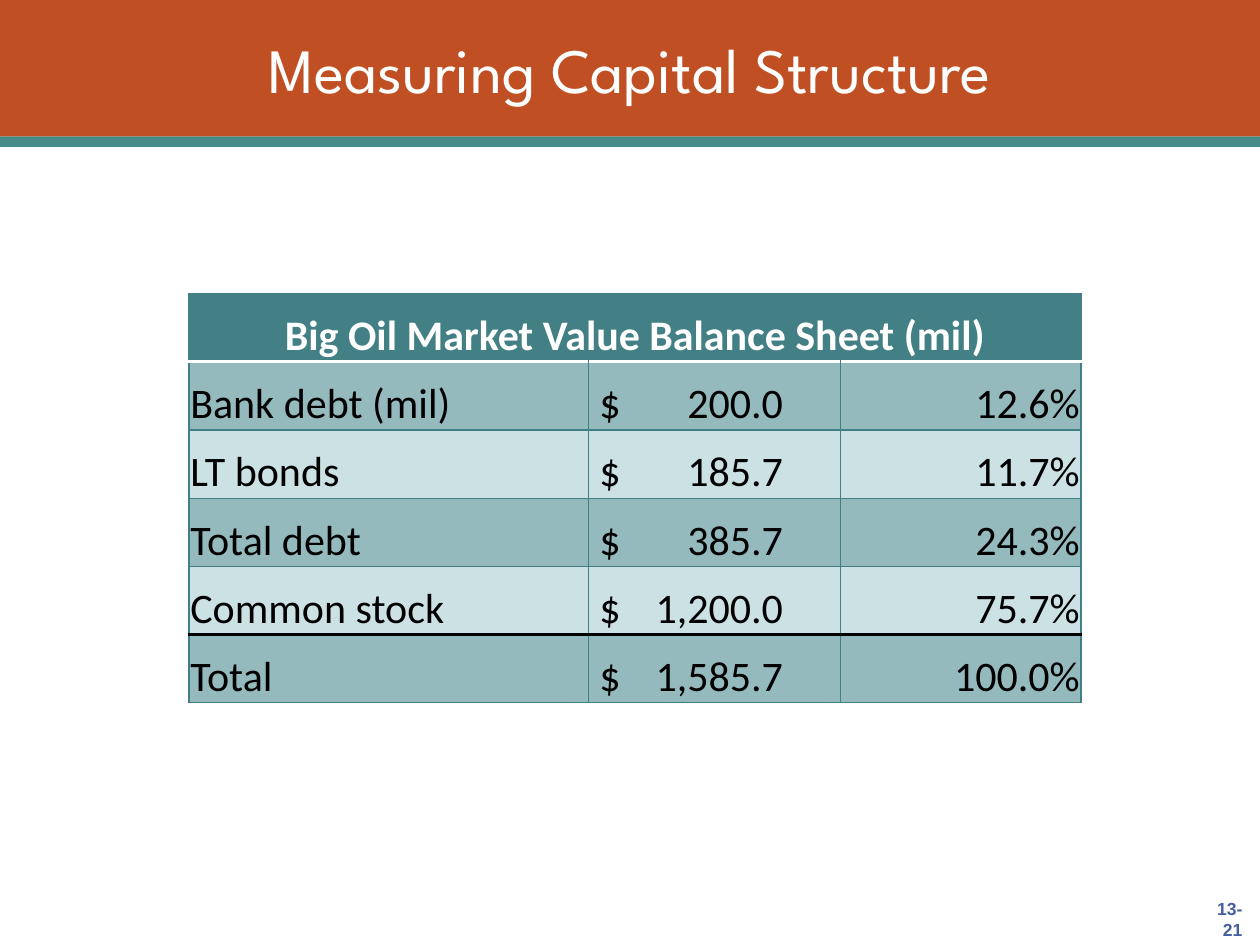
"""Build the capital structure slide with its market value balance sheet."""
from lxml import etree
from pptx import Presentation
from pptx.dml.color import RGBColor
from pptx.enum.shapes import MSO_SHAPE
from pptx.enum.text import MSO_ANCHOR, PP_ALIGN
from pptx.oxml.ns import qn
from pptx.util import Pt

RECTANGLE = MSO_SHAPE.RECTANGLE
MIDDLE, BOTTOM = MSO_ANCHOR.MIDDLE, MSO_ANCHOR.BOTTOM
LEFT, CENTER, RIGHT = PP_ALIGN.LEFT, PP_ALIGN.CENTER, PP_ALIGN.RIGHT
GRID = ("407F85", 0.75)
HEADER_RULE = ("FFFFFF", 2)
TOTAL_RULE = ("000000", 2.25)


def color(hex_string):
    return RGBColor.from_string(hex_string)


def set_borders(cell, top, bottom):
    properties = cell._tc.get_or_add_tcPr()
    sides = (("a:lnL", GRID), ("a:lnR", GRID), ("a:lnT", top), ("a:lnB", bottom))
    for position, (tag, (line_color, width)) in enumerate(sides):
        line = etree.Element(qn(tag), w=str(Pt(width)))
        fill = etree.SubElement(line, qn("a:solidFill"))
        etree.SubElement(fill, qn("a:srgbClr"), val=line_color)
        properties.insert(position, line)


presentation = Presentation()
presentation.slide_width, presentation.slide_height = Pt(720), Pt(540)
slide = presentation.slides.add_slide(presentation.slide_layouts[5])
title = slide.shapes.title

for top, height, fill_color in ((78, 6, "458B8A"), (0, 78, "C05023")):
    band = slide.shapes.add_shape(RECTANGLE, 0, Pt(top), Pt(720), Pt(height))
    band.shadow.inherit = False
    band.fill.solid()
    band.fill.fore_color.rgb = color(fill_color)
    band.line.fill.background()

page_number = slide.shapes.add_textbox(Pt(681), Pt(510), Pt(36), Pt(30))
page_number.text_frame.word_wrap = False
page_number.text_frame.vertical_anchor = MIDDLE
paragraph = page_number.text_frame.paragraphs[0]
paragraph.text = "13- 21"
paragraph.alignment = RIGHT
paragraph.font.name, paragraph.font.size = "Arial", Pt(10)
paragraph.font.bold = True
paragraph.font.color.rgb = color("455EA0")

slide.shapes._spTree.append(title._element)
title.left, title.top, title.width, title.height = Pt(54), Pt(6), Pt(612), Pt(66)
title.text_frame.vertical_anchor = MIDDLE
paragraph = title.text_frame.paragraphs[0]
paragraph.text = "Measuring Capital Structure"
paragraph.alignment = CENTER
paragraph.font.name, paragraph.font.size = "League Spartan", Pt(36)
paragraph.font.color.rgb = color("FFFFFF")

rows = [
    ("Big Oil Market Value Balance Sheet (mil)", "", ""),
    ("Bank debt (mil)", "$\t200.0", "12.6%"),
    ("LT bonds", "$\t185.7", "11.7%"),
    ("Total debt", "$\t385.7", "24.3%"),
    ("Common stock", "$\t1,200.0", "75.7%"),
    ("Total", "$\t1,585.7", "100.0%"),
]
column_widths = (228.25, 144, 137.5)
row_rules = [GRID, HEADER_RULE, GRID, GRID, GRID, TOTAL_RULE, GRID]

table = slide.shapes.add_table(len(rows), len(column_widths), Pt(108), Pt(167.75),
                               Pt(sum(column_widths)), Pt(39 * len(rows))).table
for column, width in zip(table.columns, column_widths):
    column.width = Pt(width)
table.cell(0, 0).merge(table.cell(0, 2))

for row_index, texts in enumerate(rows):
    is_header = row_index == 0
    table.rows[row_index].height = Pt(39)
    row_fill = "438086" if is_header else ("CBE1E4", "95BABE")[row_index % 2]
    for column_index, text in enumerate(texts):
        cell = table.cell(row_index, column_index)
        cell.margin_left = Pt(6.25 if column_index == 1 else 0.75)
        cell.margin_right = cell.margin_top = Pt(0.75)
        cell.margin_bottom = 0
        cell.vertical_anchor = BOTTOM
        cell.fill.solid()
        cell.fill.fore_color.rgb = color(row_fill)
        set_borders(cell, row_rules[row_index], row_rules[row_index + 1])
        paragraph = cell.text_frame.paragraphs[0]
        paragraph.text = text
        paragraph.alignment = CENTER if is_header else (LEFT, LEFT, RIGHT)[column_index]
        paragraph.font.name, paragraph.font.size = "Calibri", Pt(24)
        paragraph.font.bold = is_header
        paragraph.font.color.rgb = color("FFFFFF" if is_header else "000000")
        if column_index == 1 and not is_header:
            tabs = etree.Element(qn("a:tabLst"))
            etree.SubElement(tabs, qn("a:tab"), pos=str(Pt(105)), algn="r")
            paragraph._p.get_or_add_pPr().insert(0, tabs)

presentation.save("out.pptx")
